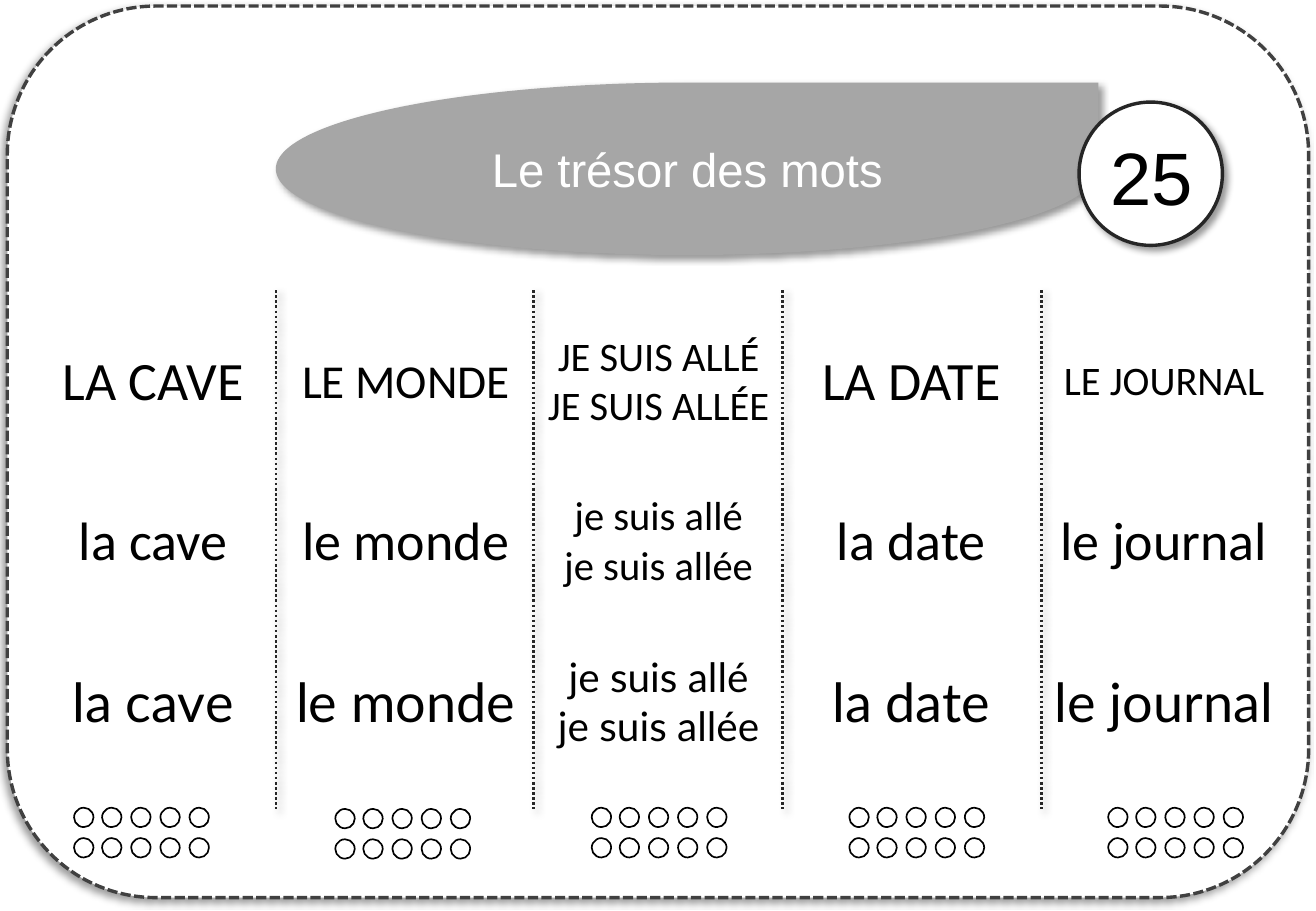
from dataclasses import dataclass
from lxml.etree import SubElement as Sub
from pptx import Presentation as Deck
from pptx.dml.color import RGBColor as Rgb
from pptx.enum.dml import MSO_LINE as Dash
from pptx.enum.shapes import MSO_CONNECTOR as Link, MSO_SHAPE as Form
from pptx.enum.text import MSO_ANCHOR as Anchor, MSO_AUTO_SIZE as Fit, PP_ALIGN as Align
from pptx.oxml.ns import qn
from pptx.util import Pt


@dataclass(frozen=True)
class Theme:
    white: str = "FFFFFF"
    black: str = "000000"
    dark: str = "262626"
    edge: str = "404040"
    gray: str = "A6A6A6"
    head: str = "Arial"
    sans: str = "Calibri"
    hand: str = "Lato"
    title: int = 28
    badge: int = 44
    large: int = 32
    mid: int = 28
    small: int = 24


T = Theme()
SCALE = 9144
PLAIN = "{2D5ABB26-0587-4C30-8999-92F81FD0307C}"
WENT = "je suis allé\nje suis allée"
WORDS = ["la cave", "le monde", WENT, "la date", "le journal"]
CAPS = [T.large, T.mid, T.small, T.large, T.small]
LOWER = [T.large, T.large, T.small, T.large, T.large]
ROWS = [([w.upper() for w in WORDS], CAPS, T.sans),
        (WORDS, LOWER, T.sans),
        (WORDS, LOWER, T.hand)]
RULES = [227, 439, 644, 857]
DOTS = [(61, 665), (276, 666), (487, 665), (699, 665), (912, 665)]


def px(*nums):
    return [n * SCALE for n in nums]


def shade(item, angle=None):
    fx = Sub(item.element.spPr, qn("a:effectLst"))
    if angle is not None:
        cast = Sub(fx, qn("a:outerShdw"), blurRad=str(Pt(4)), dist=str(Pt(3)),
                   dir=str(angle * 60000), algn="tl", rotWithShape="0")
        tint = Sub(cast, qn("a:srgbClr"), val=T.black)
        Sub(tint, qn("a:alpha"), val="40000")


def stroke(item, color, width, dash=None):
    item.line.color.rgb = Rgb.from_string(color)
    item.line.width = Pt(width)
    if dash:
        item.line.dash_style = dash


def draw(group, form, box, fill, pen=None, angle=None):
    item = group.add_shape(form, *px(*box))
    item.fill.solid()
    item.fill.fore_color.rgb = Rgb.from_string(fill)
    if pen:
        stroke(item, *pen)
    else:
        item.line.fill.background()
    shade(item, angle)


def write(frame, text, size, font, color=T.black):
    for i, part in enumerate(text.split("\n")):
        para = frame.add_paragraph() if i else frame.paragraphs[0]
        props = para._p.get_or_add_pPr()
        props.set("marL", "0")
        props.set("indent", "0")
        Sub(props, qn("a:buNone"))
        para.alignment = Align.CENTER
        para.space_before = Pt(0)
        run = para.add_run()
        run.text = part
        run.font.size = Pt(size)
        run.font.name = font
        run.font.color.rgb = Rgb.from_string(color)


def place(hold, box, anchor, top=5):
    hold.left, hold.top, hold.width, hold.height = px(*box)
    hold.element.getparent().append(hold.element)
    frame = hold.text_frame
    frame.auto_size = Fit.NONE
    frame.word_wrap = True
    frame.vertical_anchor = anchor
    frame.margin_top = top * SCALE
    return frame


def border(slide, box):
    draw(slide.shapes, Form.ROUNDED_RECTANGLE, box, T.white,
         (T.edge, 2, Dash.SQUARE_DOT), 135)


def rules(slide, top, base):
    for x in RULES:
        rule = slide.shapes.add_connector(Link.STRAIGHT, *px(x, top, x, base))
        stroke(rule, T.dark, 1.5, Dash.ROUND_DOT)
        shade(rule, 45)


def tally(slide, left, top):
    group = slide.shapes.add_group_shape()
    for row in range(2):
        for col in range(5):
            box = left + col * 95 // 4, top + row * 25, 16, 16
            draw(group.shapes, Form.OVAL, box, T.white, (T.black, 1))


def banner(slide, box):
    draw(slide.shapes, Form.TEAR, box, T.gray, angle=45)
    frame = place(slide.shapes.title, box, Anchor.MIDDLE)
    write(frame, "Le trésor des mots", T.title, T.head, T.white)


def badge(slide, box):
    left, top, width, height = box
    draw(slide.shapes, Form.OVAL, box, T.white, (T.dark, 2), 45)
    spot = left + 1, top + 13, width, height - 8
    frame = place(slide.placeholders[1], spot, Anchor.TOP, 11)
    write(frame, "25", T.badge, T.head)


def grid(slide, box):
    frame = slide.shapes.add_table(len(ROWS), len(WORDS), *px(*box))
    table = frame.table
    table.first_row = table.horz_banding = False
    for style in frame.element.iter(qn("a:tableStyleId")):
        style.text = PLAIN
    for r, (words, sizes, font) in enumerate(ROWS):
        for c, (word, size) in enumerate(zip(words, sizes)):
            cell = table.cell(r, c)
            cell.fill.background()
            cell.vertical_anchor = Anchor.MIDDLE
            write(cell.text_frame, word, size, font)


def main():
    deck = Deck()
    deck.slide_width, deck.slide_height = px(1083, 750)
    slide = deck.slides.add_slide(deck.slide_layouts[1])
    border(slide, (6, 5, 1071, 734))
    rules(slide, 239, 666)
    for left, top in DOTS:
        tally(slide, left, top)
    banner(slide, (227, 68, 677, 142))
    badge(slide, (888, 84, 118, 118))
    grid(slide, (22, 249, 1040, 394))
    deck.save("out.pptx")


if __name__ == "__main__":
    main()
